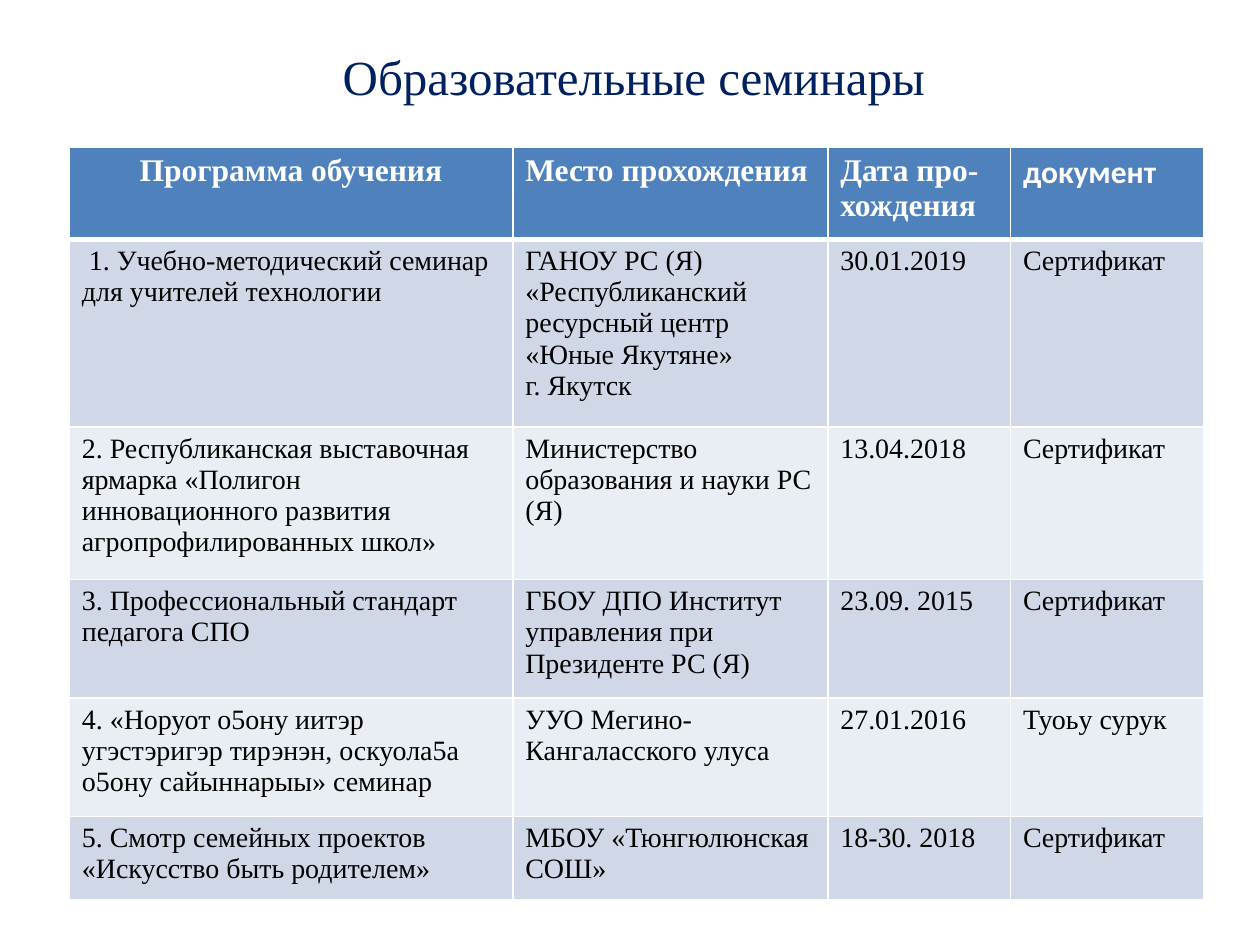
from lxml.etree import SubElement
from pptx import Presentation
from pptx.dml.color import RGBColor
from pptx.enum.text import MSO_ANCHOR, PP_ALIGN
from pptx.oxml.ns import qn
from pptx.util import Inches, Pt

COLORS = {
    "title": "002060",
    "header": "4F81BD",
    "odd": "D0D8E8",
    "even": "E9EDF4",
    "white": "FFFFFF",
    "text": "000000",
}
SERIF = "Times New Roman"
TITLE = "Образовательные семинары"
COLUMN_WIDTHS = [3.52, 2.5, 1.45, 1.53]
ROW_HEIGHTS = [0.73, 1.49, 1.21, 0.94, 0.94, 0.66]
ROWS = [
    ["Программа обучения", "Место прохождения", "Дата про-\nхождения", "документ"],
    [" 1. Учебно-методический семинар для учителей технологии",
     "ГАНОУ РС (Я) «Республиканский ресурсный центр «Юные Якутяне»\nг. Якутск",
     "30.01.2019", "Сертификат"],
    ["2. Республиканская выставочная ярмарка «Полигон инновационного развития "
     "агропрофилированных школ»",
     "Министерство образования и науки РС (Я)", "13.04.2018", "Сертификат"],
    ["3. Профессиональный стандарт педагога СПО",
     "ГБОУ ДПО Институт управления при Президенте РС (Я)",
     "23.09. 2015", "Сертификат"],
    ["4. «Норуот о5ону иитэр угэстэригэр тирэнэн, оскуола5а о5ону сайыннарыы» семинар",
     "УУО Мегино-Кангаласского улуса", "27.01.2016", "Туоьу сурук"],
    ["5. Смотр семейных проектов «Искусство быть родителем»",
     "МБОУ «Тюнгюлюнская СОШ»", "18-30. 2018", "Сертификат"],
]


def format_text(text_frame, color, alignment=PP_ALIGN.LEFT, **font_values):
    """Apply alignment, colour and font values to every run of a text frame."""
    for paragraph in text_frame.paragraphs:
        paragraph.alignment = alignment
        for run in paragraph.runs:
            run.font.color.rgb = RGBColor.from_string(COLORS[color])
            for name, value in font_values.items():
                setattr(run.font, name, value)


def set_borders(cell, bottom_width):
    """Draw white lines of one point around a cell, with its own bottom width."""
    properties = cell._tc.get_or_add_tcPr()
    for side, width in {"L": 1, "R": 1, "T": 1, "B": bottom_width}.items():
        line = SubElement(properties, qn(f"a:ln{side}"), w=str(Pt(width)))
        fill = SubElement(line, qn("a:solidFill"))
        SubElement(fill, qn("a:srgbClr"), val=COLORS["white"])


def add_title(slide, left, top, width, height):
    """Place and format the slide title."""
    title = slide.shapes.title
    box = {"left": left, "top": top, "width": width, "height": height}
    for name, value in box.items():
        setattr(title, name, Inches(value))
    title.text_frame.text = TITLE
    title.text_frame.vertical_anchor = MSO_ANCHOR.MIDDLE
    format_text(title.text_frame, "title", PP_ALIGN.CENTER, name=SERIF, size=Pt(28))


def fill_cell(cell, text, row, column):
    """Write and style one table cell according to its row and column."""
    is_header = row == 0
    cell.text_frame.text = text
    set_borders(cell, 3 if is_header else 1)
    band = "header" if is_header else "odd" if row % 2 else "even"
    cell.fill.solid()
    cell.fill.fore_color.rgb = RGBColor.from_string(COLORS[band])
    format_text(
        cell.text_frame,
        "white" if is_header else "text",
        PP_ALIGN.CENTER if is_header and column == 0 else PP_ALIGN.LEFT,
        name="Calibri" if is_header and column == 3 else SERIF,
        size=Pt(18 if is_header else 16),
        bold=is_header,
    )


def add_seminar_table(slide, left, top, width, height):
    """Add the table of seminars."""
    table = slide.shapes.add_table(
        len(ROWS), len(COLUMN_WIDTHS),
        Inches(left), Inches(top), Inches(width), Inches(height),
    ).table
    for column, column_width in zip(table.columns, COLUMN_WIDTHS):
        column.width = Inches(column_width)
    for row, row_height in zip(table.rows, ROW_HEIGHTS):
        row.height = Inches(row_height)
    for row, texts in enumerate(ROWS):
        for column, text in enumerate(texts):
            fill_cell(table.cell(row, column), text, row, column)


def main():
    """Build and save the presentation."""
    presentation = Presentation()
    presentation.slide_width = Inches(10)
    presentation.slide_height = Inches(7.5)
    slide = presentation.slides.add_slide(presentation.slide_layouts[5])
    add_title(slide, 0.53, 0.13, 9, 0.95)
    add_seminar_table(slide, 0.55, 1.17, 9, 5.97)
    presentation.save("out.pptx")


if __name__ == "__main__":
    main()
